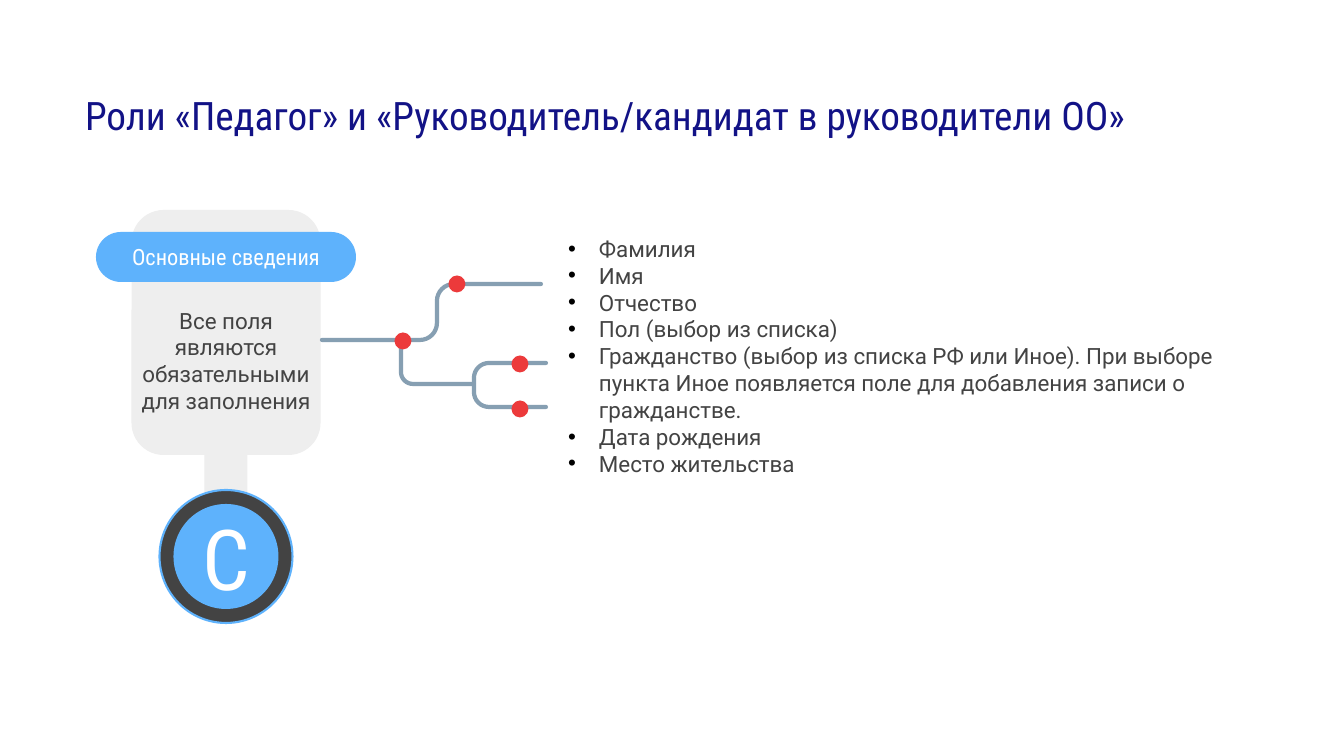
import math
from lxml import etree
from pptx import Presentation
from pptx.dml.color import RGBColor
from pptx.enum.shapes import MSO_SHAPE
from pptx.enum.text import MSO_ANCHOR, MSO_AUTO_SIZE, PP_ALIGN
from pptx.oxml.ns import qn
from pptx.util import Pt

PX = 914400 / 100.8
RECT, ROUND, OVAL = MSO_SHAPE.RECTANGLE, MSO_SHAPE.ROUNDED_RECTANGLE, MSO_SHAPE.OVAL
TOP, MIDDLE = MSO_ANCHOR.TOP, MSO_ANCHOR.MIDDLE
LEFT, CENTER = PP_ALIGN.LEFT, PP_ALIGN.CENTER
NO_FIT, GROW = MSO_AUTO_SIZE.NONE, MSO_AUTO_SIZE.SHAPE_TO_FIT_TEXT
NAVY = RGBColor(0x12, 0x12, 0x86)
PALE = RGBColor(0xEE, 0xEE, 0xEE)
DARK = RGBColor(0x43, 0x43, 0x43)
BLUE = RGBColor(0x5E, 0xB2, 0xFC)
STEEL = RGBColor(0x86, 0x9F, 0xB2)
RED = RGBColor(0xEC, 0x3A, 0x3B)
WHITE = RGBColor(0xFF, 0xFF, 0xFF)
SANS, NARROW = "Roboto", "Roboto Condensed"

FIELDS = [
    "Фамилия",
    "Имя",
    "Отчество",
    "Пол (выбор из списка)",
    "Гражданство (выбор из списка РФ или Иное). При выборе пункта Иное "
    "появляется поле для добавления записи о гражданстве.",
    "Дата рождения",
    "Место жительства",
]
BRANCHES = [
    (17, [(2, 64), (117, 64), (117, 8), (221, 8)]),
    (12, [(81, 64), (81, 108), (154, 108)]),
    (15, [(226, 87), (154, 87), (154, 131), (226, 131)]),
]
NODES = [(137, 8), (83, 65), (200, 88), (200, 133)]


def px(*lengths):
    """Turn pixel lengths into EMU."""
    return [round(n * PX) for n in lengths]


def write(sp, lines, size, font, color, align=LEFT, anchor=MIDDLE,
          insets=(10, 10, 10, 10), fit=NO_FIT):
    """Fill a shape with formatted paragraphs."""
    tf = sp.text_frame
    left, top, right, bottom = px(*insets)
    frame = {"margin_left": left, "margin_top": top, "margin_right": right,
             "margin_bottom": bottom, "word_wrap": True,
             "vertical_anchor": anchor, "auto_size": fit}
    for name, value in frame.items():
        setattr(tf, name, value)
    for i, line in enumerate(lines):
        p = tf.add_paragraph() if i else tf.paragraphs[0]
        p.alignment = align
        r = p.add_run()
        r.text = line
        for name, value in {"size": Pt(size), "name": font, "bold": False}.items():
            setattr(r.font, name, value)
        r.font.color.rgb = color
    return tf


def add_block(shapes, kind, box, fill, adj=None):
    """Add a flat filled shape without an outline."""
    sp = shapes.add_shape(kind, *px(*box))
    sp.shadow.inherit = False
    sp.fill.solid()
    sp.fill.fore_color.rgb = fill
    sp.line.fill.background()
    if adj is not None:
        sp.adjustments[0] = adj
    return sp


def add_title(s, x, y, w, h):
    """Place and format the slide title."""
    sp = s.shapes.title
    sp.left, sp.top, sp.width, sp.height = px(x, y, w, h)
    write(sp, ["Роли «Педагог» и «Руководитель/кандидат в руководители ОО»"],
          28, NARROW, NAVY, insets=(13, 13, 13, 13))


def add_card(s, x, y, w):
    """Draw the hanging card with its pill heading and round letter badge."""
    shapes = s.shapes.add_group_shape().shapes
    mid = x + w / 2

    def centred(width, top, height):
        """Give a box centred on the card."""
        return mid - width / 2, y + top, width, height

    add_block(shapes, RECT, centred(43, 245, 112), PALE)
    body = add_block(shapes, ROUND, centred(189, 0, 245), PALE, 0.17)
    write(body, ["Все поля являются обязательными для заполнения"],
          16, SANS, DARK, CENTER, insets=(0, 66, 0, 10))
    pill = add_block(shapes, ROUND, centred(w, 22, 50), BLUE, 0.5)
    write(pill, ["Основные сведения"], 16, NARROW, WHITE, CENTER)
    ring = add_block(shapes, OVAL, centred(133, 280, 133), DARK)
    ring.line.color.rgb = BLUE
    ring.line.width = Pt(1.5)
    disc = add_block(shapes, OVAL, centred(105, 294, 105), BLUE)
    write(disc, ["С"], 60, NARROW, WHITE, CENTER)


def rounded(points, radius, steps=8):
    """Replace the corners of a right-angled route by quarter circles."""
    route = [points[0]]
    for a, b, c in zip(points, points[1:], points[2:]):
        back, ahead = [((q[0] - b[0]) / math.dist(q, b), (q[1] - b[1]) / math.dist(q, b))
                       for q in (a, c)]
        for i in range(steps + 1):
            t = math.pi / 2 * i / steps
            m, n = radius * (1 - math.sin(t)), radius * (1 - math.cos(t))
            route.append((b[0] + m * back[0] + n * ahead[0],
                          b[1] + m * back[1] + n * ahead[1]))
    return route + [points[-1]]


def add_branches(s, x, y):
    """Draw the branching line and its red nodes."""
    routes = [[px(x + u, y + v) for u, v in rounded(points, radius)]
              for radius, points in BRANCHES]
    fb = s.shapes.build_freeform(*routes[0][0], scale=1.0)
    for i, route in enumerate(routes):
        if i:
            fb.move_to(*route[0])
        fb.add_line_segments(route[1:], close=False)
    sp = fb.convert_to_shape()
    sp.shadow.inherit = False
    sp.fill.background()
    sp.line.color.rgb = STEEL
    sp.line.width = Pt(3)
    sp.line._get_or_add_ln().set("cap", "rnd")
    d = 17
    for u, v in NODES:
        add_block(s.shapes, OVAL, (x + u - d / 2, y + v - d / 2, d, d), RED)


def add_fields(s, x, y, w, h):
    """Write the bulleted list of form fields."""
    sp = s.shapes.add_textbox(*px(x, y, w, h))
    tf = write(sp, FIELDS, 16, SANS, DARK, anchor=TOP, insets=(10, 5, 10, 5), fit=GROW)
    indent = px(31)[0]
    for p in tf.paragraphs:
        pPr = p._p.get_or_add_pPr()
        pPr.set("marL", str(indent))
        pPr.set("indent", str(-indent))
        color = etree.SubElement(pPr, qn("a:buClr"))
        etree.SubElement(color, qn("a:srgbClr"), val="000000")
        etree.SubElement(pPr, qn("a:buFont"), typeface="Arial")
        etree.SubElement(pPr, qn("a:buChar"), char="•")


def main():
    """Build the slide and save it."""
    prs = Presentation()
    prs.slide_width, prs.slide_height = px(1344, 756)
    s = prs.slides.add_slide(prs.slide_layouts[5])
    add_title(s, 72, 79, 1234, 71)
    add_card(s, 96, 210, 260)
    add_fields(s, 558, 230, 672, 254)
    add_branches(s, 320, 276)
    prs.save("out.pptx")


if __name__ == "__main__":
    main()
